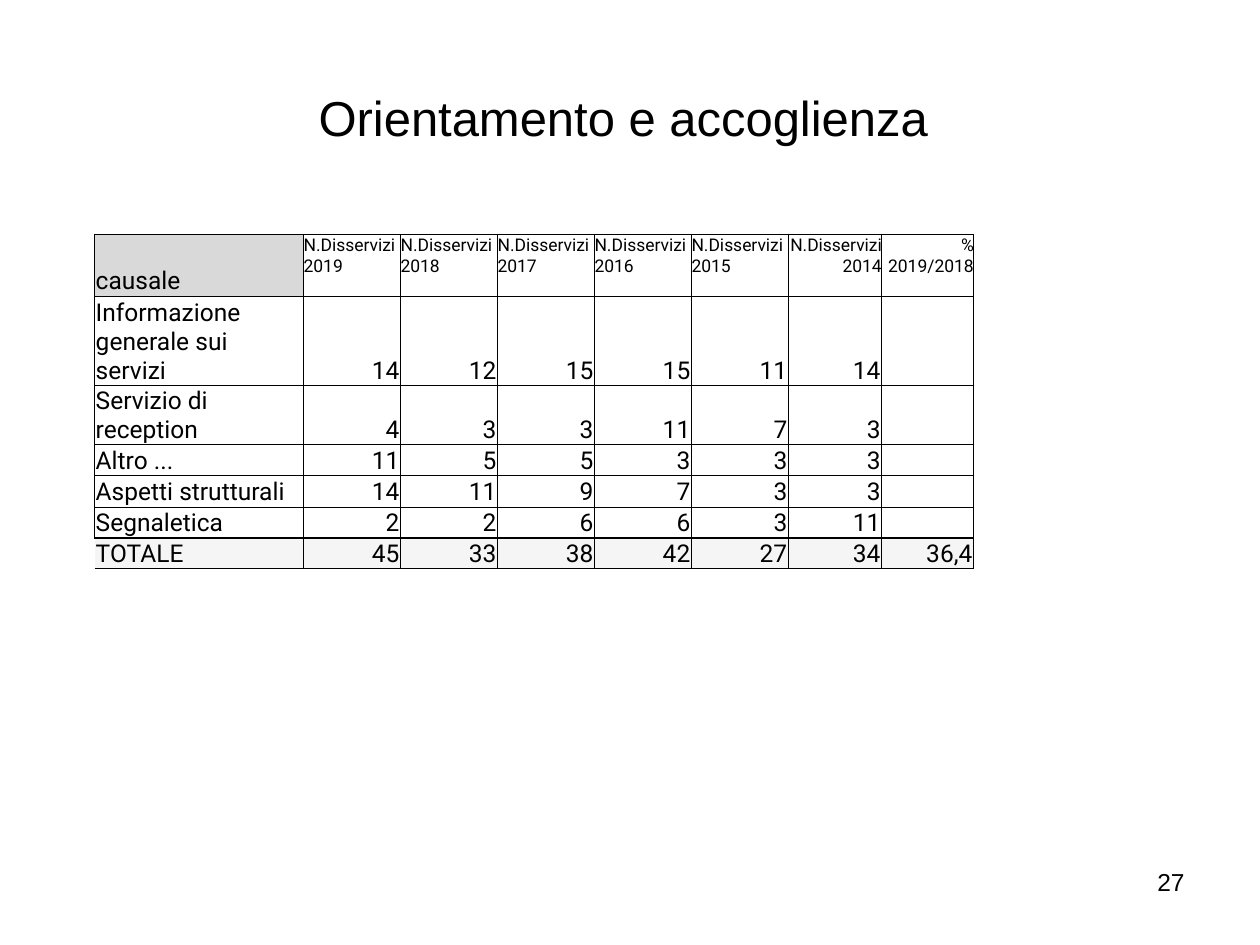
from lxml import etree
from pptx import Presentation
from pptx import util as u
from pptx.dml.color import RGBColor
from pptx.enum import text
from pptx.oxml.ns import qn

THEME = {
    "ink": "000000", "head": "D9D9D9", "plain": "FFFFFF", "total": "F5F5F5",
    "sans": "Arial", "body": "Roboto",
    "title": 28, "text": 14, "small": 10, "thin": 0.5, "thick": 1,
}
LEFT, RIGHT, CENTER = text.PP_ALIGN.LEFT, text.PP_ALIGN.RIGHT, text.PP_ALIGN.CENTER


def write(frame, words, size, font, align):
    """Fill a text frame, one paragraph per line of words."""
    for i, line in enumerate(words.split("\n")):
        para = frame.paragraphs[0] if i == 0 else frame.add_paragraph()
        para.alignment = align
        if not line:
            # An empty cell keeps the row low only if its end mark is sized
            end = etree.SubElement(para._p, qn("a:endParaRPr"))
            end.set("sz", str(size * 100))
            continue
        run = para.add_run()
        run.text = line
        run.font.size = u.Pt(size)
        run.font.name = font
        run.font.color.rgb = RGBColor.from_string(THEME["ink"])


def border(cell, widths):
    """Draw cell borders; the lines must come before the fill in tcPr."""
    props = cell._tc.get_or_add_tcPr()
    for i, (side, width) in enumerate(widths.items()):
        line = etree.Element(qn("a:ln" + side), w=str(u.Pt(width)))
        if width:
            fill = etree.SubElement(line, qn("a:solidFill"))
            etree.SubElement(fill, qn("a:srgbClr"), val=THEME["ink"])
        else:
            etree.SubElement(line, qn("a:noFill"))
        props.insert(i, line)


deck = Presentation()
deck.slide_width, deck.slide_height = u.Inches(10), u.Inches(7.5)
slide = deck.slides.add_slide(deck.slide_layouts[5])

# Title
title = slide.shapes.title
title.left, title.top = u.Inches(0.5), u.Inches(0.3)
title.width, title.height = u.Inches(9), u.Inches(1.25)
title.text_frame.vertical_anchor = text.MSO_ANCHOR.MIDDLE
write(title.text_frame, "Orientamento e accoglienza ", THEME["title"], THEME["sans"], CENTER)

# Table of complaints by cause and year
years = range(2019, 2013, -1)
rows = [
    ["causale"] + [f"N.Disservizi {year}" for year in years] + ["%\n2019/2018"],
    ["Informazione generale sui servizi", 14, 12, 15, 15, 11, 14, ""],
    ["Servizio di reception", 4, 3, 3, 11, 7, 3, ""],
    ["Altro ...", 11, 5, 5, 3, 3, 3, ""],
    ["Aspetti strutturali", 14, 11, 9, 7, 3, 3, ""],
    ["Segnaletica", 2, 2, 6, 6, 3, 11, ""],
    ["TOTALE", 45, 33, 38, 42, 27, 34, "36,4"],
]
wide = [1.66] + [0.77] * 5 + [0.74, 0.73]
high = [0.49, 0.71, 0.47] + [0.24] * 4
last = len(rows) - 1

frame = slide.shapes.add_table(
    len(rows), len(wide), u.Inches(0.75), u.Inches(1.86),
    u.Inches(sum(wide)), u.Inches(sum(high)))
table = frame.table
table.first_row = table.horz_banding = False
for col, width in zip(table.columns, wide):
    col.width = u.Inches(width)
for row, height in zip(table.rows, high):
    row.height = u.Inches(height)

for r, row in enumerate(rows):
    for c, value in enumerate(row):
        cell = table.cell(r, c)
        label = r == 0 and c > 0
        cell.margin_left = cell.margin_right = u.Inches(0 if label else 0.01)
        cell.margin_top, cell.margin_bottom = u.Inches(0.01), 0
        cell.vertical_anchor = text.MSO_ANCHOR.TOP if label else text.MSO_ANCHOR.BOTTOM
        shade = "total" if r == last else "head" if r == c == 0 else "plain"
        cell.fill.solid()
        cell.fill.fore_color.rgb = RGBColor.from_string(THEME[shade])
        align = LEFT if c == 0 or (r == 0 and c < 6) else RIGHT
        size = THEME["small" if label else "text"]
        write(cell.text_frame, str(value), size, THEME["body"], align)
        border(cell, {
            "L": 0 if r == last and c == 0 else THEME["thin"],
            "R": THEME["thin"],
            "T": THEME["thick" if r == last else "thin"],
            "B": THEME["thick" if r >= last - 1 else "thin"],
        })

# Page number
page = slide.shapes.add_textbox(u.Inches(7.17), u.Inches(6.83), u.Inches(2.33), u.Inches(0.52))
page.text_frame.word_wrap = True
write(page.text_frame, "27", THEME["text"], THEME["sans"], RIGHT)

deck.save("out.pptx")
